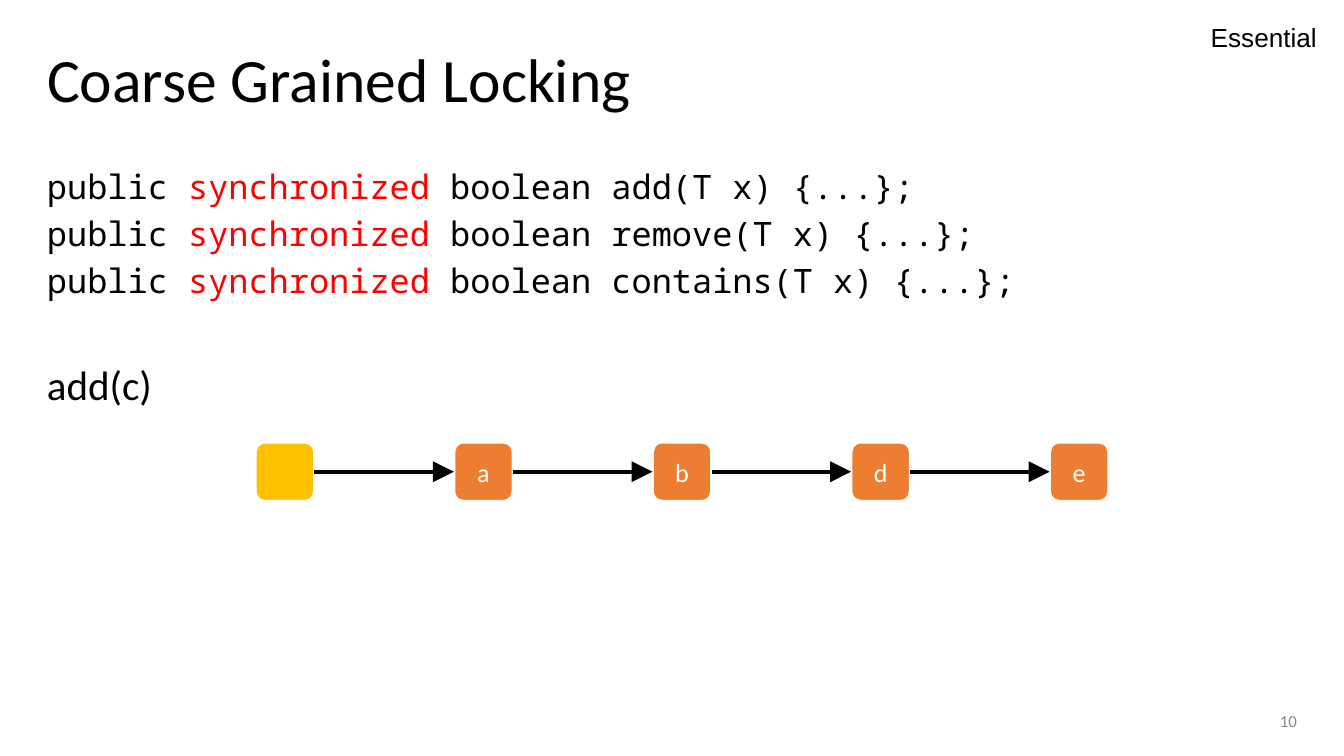
from dataclasses import dataclass

from lxml import etree
from pptx import Presentation
from pptx.dml.color import RGBColor
from pptx.enum.shapes import MSO_CONNECTOR, MSO_SHAPE
from pptx.enum.text import MSO_ANCHOR, MSO_AUTO_SIZE, PP_ALIGN
from pptx.oxml.ns import qn
from pptx.util import Inches, Pt

STRAIGHT = MSO_CONNECTOR.STRAIGHT
ROUNDED = MSO_SHAPE.ROUNDED_RECTANGLE
TOP, MIDDLE = MSO_ANCHOR.TOP, MSO_ANCHOR.MIDDLE
LEFT, CENTER, RIGHT = PP_ALIGN.LEFT, PP_ALIGN.CENTER, PP_ALIGN.RIGHT
NO_AUTOFIT = MSO_AUTO_SIZE.NONE
LEFT_SITE, RIGHT_SITE = 1, 3
TITLE_ONLY = 5


@dataclass(frozen=True)
class Theme:
    ink: str = "000000"
    paper: str = "FFFFFF"
    muted: str = "888888"
    keyword: str = "FF0000"
    sentinel: str = "FFC000"
    node: str = "ED7D31"
    sans: str = "Calibri"
    mono: str = "Noto Sans Mono"
    label: str = "Arial"
    title_size: float = 33
    call_size: float = 22
    code_size: float = 18
    label_size: float = 14
    number_size: float = 9


def rgb(value):
    return RGBColor.from_string(value)


def write(paragraph, text, *, font, size, color, align=LEFT, spacing=1.0, before=0):
    paragraph.alignment = align
    paragraph.line_spacing = spacing
    paragraph.space_before = Pt(before)
    run = paragraph.add_run()
    run.text = text
    run.font.name = font
    run.font.size = Pt(size)
    run.font.color.rgb = rgb(color)


class SlideBuilder:
    def __init__(self, slide, theme):
        self.slide = slide
        self.theme = theme

    def frame(self, shape, anchor=TOP, wrap=True, insets=(0.07, 0.04)):
        frame = shape.text_frame
        frame.auto_size = NO_AUTOFIT
        frame.word_wrap = wrap
        frame.vertical_anchor = anchor
        frame.margin_left = frame.margin_right = Inches(insets[0])
        frame.margin_top = frame.margin_bottom = Inches(insets[1])
        return frame

    def title(self, text, left, top, width, height):
        title = self.slide.shapes.title
        title.left, title.top = Inches(left), Inches(top)
        title.width, title.height = Inches(width), Inches(height)
        write(self.frame(title, MIDDLE).paragraphs[0], text, font=self.theme.sans,
              size=self.theme.title_size, color=self.theme.ink, spacing=0.9)

    def text_box(self, left, top, width, height, **frame_format):
        box = self.slide.shapes.add_textbox(
            Inches(left), Inches(top), Inches(width), Inches(height))
        return self.frame(box, **frame_format)

    def body(self, methods, call, left, top, width, height):
        theme = self.theme
        frame = self.text_box(left, top, width, height)
        for index, method in enumerate(methods):
            paragraph = frame.add_paragraph() if index else frame.paragraphs[0]
            for text, color in (("public ", theme.ink),
                                ("synchronized ", theme.keyword),
                                (f"boolean {method}(T x) {{...}};", theme.ink)):
                write(paragraph, text, font=theme.mono, size=theme.code_size,
                      color=color, spacing=0.8, before=8 if index else 0)
        write(frame.add_paragraph(), call, font=theme.sans, size=theme.call_size,
              color=theme.ink, spacing=0.8, before=37)

    def node(self, text, left, top, side, fill):
        node = self.slide.shapes.add_shape(
            ROUNDED, Inches(left), Inches(top), Inches(side), Inches(side))
        node.shadow.inherit = False
        node.fill.solid()
        node.fill.fore_color.rgb = rgb(fill)
        node.line.color.rgb = rgb(self.theme.paper)
        node.line.width = Pt(1.5)
        if text:
            write(self.frame(node, MIDDLE).paragraphs[0], text, font=self.theme.sans,
                  size=self.theme.label_size, color=self.theme.paper, align=CENTER)
        return node

    def arrow(self, source, target):
        arrow = self.slide.shapes.add_connector(STRAIGHT, 0, 0, 0, 0)
        arrow.begin_connect(source, RIGHT_SITE)
        arrow.end_connect(target, LEFT_SITE)
        arrow.line.color.rgb = rgb(self.theme.ink)
        arrow.line.width = Pt(2.25)
        etree.SubElement(arrow.line._get_or_add_ln(), qn("a:tailEnd"),
                         type="triangle", w="lg", len="lg")
        etree.SubElement(arrow._element.spPr, qn("a:effectLst"))

    def linked_list(self, labels, first_left, last_left, top, side):
        pitch = (last_left - first_left) / (len(labels) - 1)
        nodes = [
            self.node(label, first_left + index * pitch, top, side,
                      self.theme.node if label else self.theme.sentinel)
            for index, label in enumerate(labels)
        ]
        for source, target in zip(nodes, nodes[1:]):
            self.arrow(source, target)


def main():
    theme = Theme()
    deck = Presentation()
    deck.slide_width = Inches(10)
    deck.slide_height = deck.slide_width * 9 // 16
    slide = deck.slides.add_slide(deck.slide_layouts[TITLE_ONLY])
    builder = SlideBuilder(slide, theme)

    builder.title("Coarse Grained Locking", 0.28, 0.15, 9.44, 0.93)
    page_number = builder.text_box(7.06, 5.21, 2.66, 0.3, anchor=MIDDLE)
    write(page_number.paragraphs[0], "10", font=theme.sans, size=theme.number_size,
          color=theme.muted, align=RIGHT)
    builder.body(("add", "remove", "contains"), "add(c)", 0.28, 1.25, 9.44, 3.84)
    builder.linked_list(("", "a", "b", "d", "e"), 1.9, 7.81, 3.29, 0.44)
    importance = builder.text_box(8.91, 0.11, 1, 0.34, wrap=False, insets=(0.1, 0.05))
    write(importance.paragraphs[0], "Essential", font=theme.label,
          size=theme.label_size, color=theme.ink)

    deck.save("out.pptx")


if __name__ == "__main__":
    main()
